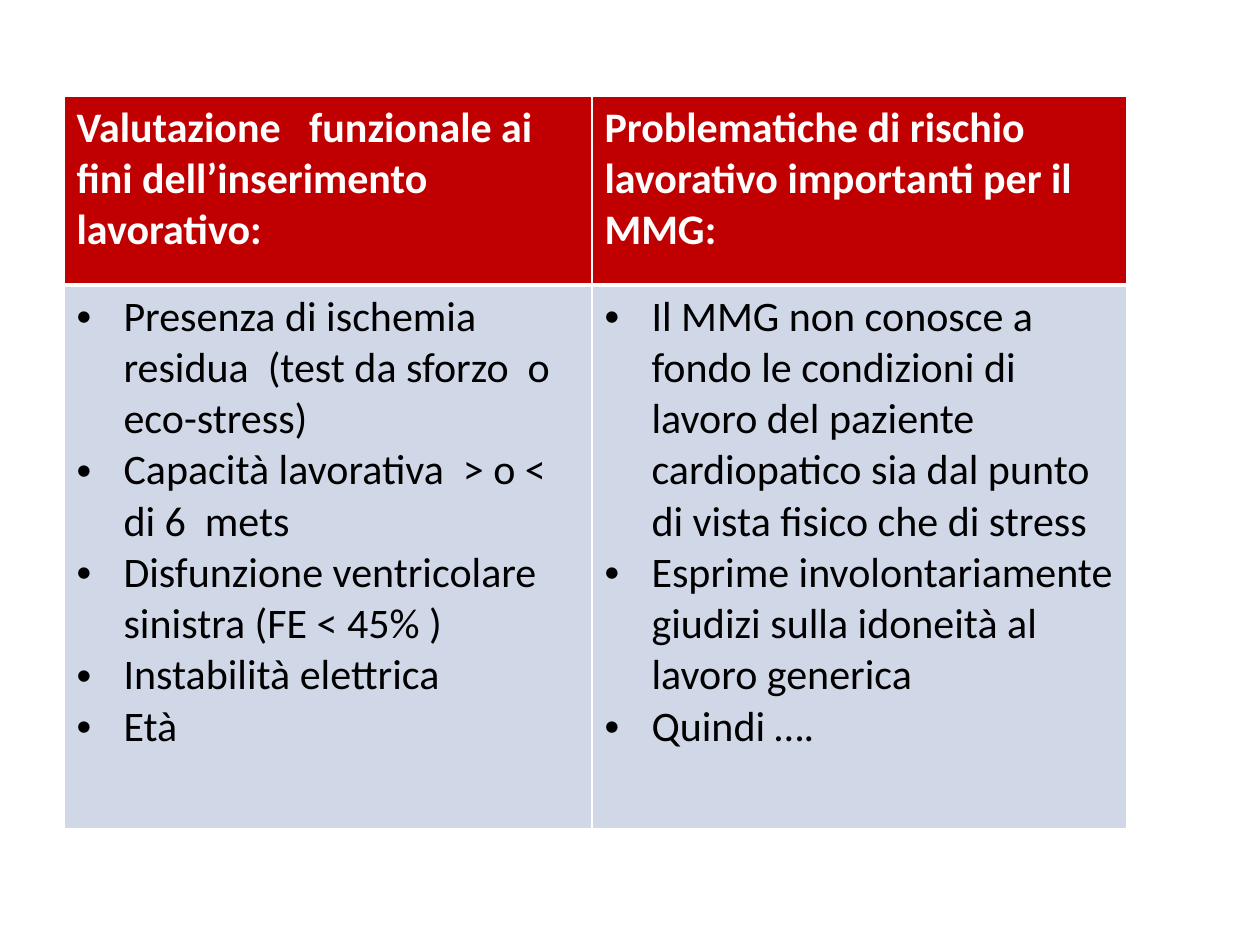
from pptx import Presentation, util as u
from pptx.dml.color import RGBColor
from pptx.oxml import parse_xml
from pptx.oxml.ns import nsdecls

PX_PER_INCH = 126
FONT = "Calibri"
WHITE, BLACK, RED, PALE_BLUE = "FFFFFF", "000000", "C00000", "D0D8E8"
INDENT = 47

COLUMNS = [
    (528, "Valutazione   funzionale ai fini dell’inserimento lavorativo:", [
        "Presenza di ischemia residua  (test da sforzo  o eco-stress)",
        "Capacità lavorativa  > o < di 6  mets",
        "Disfunzione ventricolare sinistra (FE < 45% )",
        "Instabilità elettrica",
        "Età",
    ]),
    (535, "Problematiche di rischio lavorativo importanti per il MMG:", [
        "Il MMG non conosce a fondo le condizioni di lavoro del paziente "
        "cardiopatico sia dal punto di vista fisico che di stress",
        "Esprime involontariamente giudizi sulla idoneità al lavoro generica",
        "Quindi ….",
    ]),
]
ROW_HEIGHTS = [189, 544]


def px(length):
    return u.Emu(round(length * 914400 / PX_PER_INCH))


def rgb(value):
    return RGBColor.from_string(value)


def set_borders(cell, widths):
    """Draw white borders; widths are points for left, right, top, bottom."""
    properties = cell._tc.get_or_add_tcPr()
    for position, (side, width) in enumerate(zip("LRTB", widths)):
        properties.insert(position, parse_xml(
            f'<a:ln{side} {nsdecls("a")} w="{u.Pt(width)}"><a:solidFill>'
            f'<a:srgbClr val="{WHITE}"/></a:solidFill></a:ln{side}>'))


def add_bullet(para):
    properties = para._p.get_or_add_pPr()
    properties.set("marL", str(px(INDENT)))
    properties.set("indent", str(-px(INDENT)))
    for tag in ('buFont typeface="Arial"', 'buChar char="•"'):
        properties.append(parse_xml(f'<a:{tag} {nsdecls("a")}/>'))


def fill_cell(cell, lines, fill, color, bold=False, bullets=False):
    cell.fill.solid()
    cell.fill.fore_color.rgb = rgb(fill)
    cell.text_frame.text = "\n".join(lines)
    for para in cell.text_frame.paragraphs:
        if bullets:
            add_bullet(para)
        for span in para.runs:
            span.font.name = FONT
            span.font.size = u.Pt(24)
            span.font.bold = bold
            span.font.color.rgb = rgb(color)


def add_comparison(page):
    widths = [width for width, _, _ in COLUMNS]
    table = page.shapes.add_table(
        len(ROW_HEIGHTS), len(COLUMNS), px(64), px(96),
        px(sum(widths)), px(sum(ROW_HEIGHTS))).table
    for row, height in zip(table.rows, ROW_HEIGHTS):
        row.height = px(height)
    for index, (width, heading, points) in enumerate(COLUMNS):
        table.columns[index].width = px(width)
        header, body = table.cell(0, index), table.cell(1, index)
        fill_cell(header, [heading], RED, WHITE, bold=True)
        fill_cell(body, points, PALE_BLUE, BLACK, bullets=True)
        set_borders(header, (1, 1, 1, 3))
        set_borders(body, (1, 1, 3, 1))


def main():
    deck = Presentation()
    deck.slide_width, deck.slide_height = px(1260), px(945)
    page = deck.slides.add_slide(deck.slide_layouts[6])
    add_comparison(page)
    deck.save("out.pptx")


if __name__ == "__main__":
    main()
